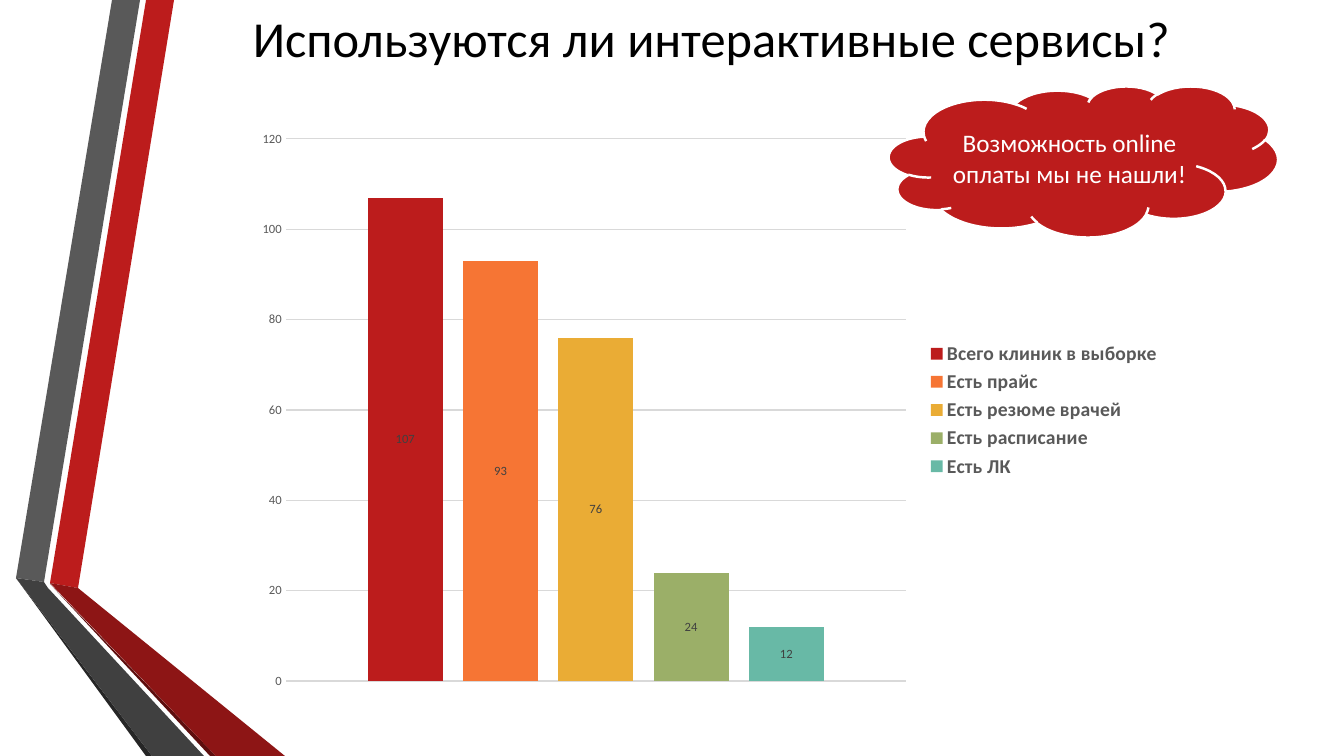
from lxml import etree
from pptx import Presentation
from pptx.chart.data import CategoryChartData
from pptx.dml.color import RGBColor
from pptx.enum.chart import XL_CHART_TYPE as ChartType
from pptx.enum.chart import XL_LABEL_POSITION as LabelPosition
from pptx.enum.chart import XL_LEGEND_POSITION as LegendPosition
from pptx.enum.chart import XL_TICK_MARK as TickMark
from pptx.enum.shapes import MSO_SHAPE as ShapeType
from pptx.enum.text import MSO_ANCHOR as Anchor
from pptx.enum.text import PP_ALIGN as Align
from pptx.util import Emu, Pt

SLIDE_WIDTH, SLIDE_HEIGHT = 1344, 756
EMU_PER_PX = 12192000 / SLIDE_WIDTH
FONT = "Calibri"

BLACK = RGBColor(0x00, 0x00, 0x00)
WHITE = RGBColor(0xFF, 0xFF, 0xFF)
RED = RGBColor(0xBC, 0x1C, 0x1C)
DEEP_RED = RGBColor(0x8D, 0x15, 0x15)
DARKEST_RED = RGBColor(0x5E, 0x0E, 0x0E)
ORANGE = RGBColor(0xF6, 0x75, 0x34)
YELLOW = RGBColor(0xEA, 0xAC, 0x35)
GREEN = RGBColor(0x9B, 0xAF, 0x68)
TEAL = RGBColor(0x68, 0xB9, 0xA6)
GRAY = RGBColor(0x59, 0x59, 0x59)
DARK_GRAY = RGBColor(0x40, 0x40, 0x40)
DARKEST_GRAY = RGBColor(0x26, 0x26, 0x26)
GRID_GRAY = RGBColor(0xD9, 0xD9, 0xD9)

TITLE = "Используются ли интерактивные сервисы?"
CLOUD_TEXT = "Возможность online оплаты мы не нашли!"
SERVICES = [
    ("Всего клиник в выборке", 107, RED),
    ("Есть прайс", 93, ORANGE),
    ("Есть резюме врачей", 76, YELLOW),
    ("Есть расписание", 24, GREEN),
    ("Есть ЛК", 12, TEAL),
]

TITLE_BOX = (159, 0, 1105, 75)
CHART_BOX = (244, 120, 928, 580)
CLOUD_BOX = (889, 86, 389, 151)
RIBBONS = [
    (RED, [(50, 583), (78, 588), (174, 0), (146, 0)]),
    (GRAY, [(140, 0), (112, 0), (16, 578), (44, 582)]),
    (DARKEST_GRAY, [(16, 578), (146, 756), (152, 756)]),
    (DARKEST_RED, [(50, 584), (210, 756), (216, 756)]),
    (DEEP_RED, [(50, 583), (216, 756), (285, 756), (78, 588)]),
    (DARK_GRAY, [(204, 756), (48, 588), (44, 582), (16, 578), (152, 756)]),
]


def to_emu(*lengths):
    return [Emu(round(length * EMU_PER_PX)) for length in lengths]


def set_font(font, size, color, bold=False):
    font.name, font.size, font.bold = FONT, Pt(size), bold
    font.color.rgb = color


def fill_text(shape, text, size, color):
    """Put one centred line of text in the middle of the shape."""
    frame = shape.text_frame
    frame.text = text
    frame.word_wrap = True
    frame.vertical_anchor = Anchor.MIDDLE
    paragraph = frame.paragraphs[0]
    paragraph.alignment = Align.CENTER
    set_font(paragraph.runs[0].font, size, color)


def add_ribbon(slide, color, points):
    builder = slide.shapes.build_freeform(*points[0], scale=EMU_PER_PX)
    builder.add_line_segments(points[1:], close=True)
    ribbon = builder.convert_to_shape()
    ribbon.fill.solid()
    ribbon.fill.fore_color.rgb = color
    ribbon.line.fill.background()
    ribbon.shadow.inherit = False


def add_title(slide):
    title = slide.shapes.title
    title.left, title.top, title.width, title.height = to_emu(*TITLE_BOX)
    fill_text(title, TITLE, 36, BLACK)


def add_services_chart(slide):
    data = CategoryChartData()
    data.categories = ["1"]
    for name, count, _ in SERVICES:
        data.add_series(name, [count])
    chart = slide.shapes.add_chart(
        ChartType.COLUMN_CLUSTERED, *to_emu(*CHART_BOX), data).chart
    set_font(chart.font, 10, BLACK)
    chart.has_title = False
    chart.has_legend = True
    chart.legend.position = LegendPosition.RIGHT
    chart.legend.include_in_layout = False
    set_font(chart.legend.font, 14, GRAY, bold=True)

    chart.category_axis.visible = False
    axis = chart.value_axis
    axis.major_tick_mark = axis.minor_tick_mark = TickMark.NONE
    axis.format.line.fill.background()
    set_font(axis.tick_labels.font, 9, GRAY)
    grid_line = axis.major_gridlines.format.line
    grid_line.color.rgb, grid_line.width = GRID_GRAY, Pt(0.75)

    plot = chart.plots[0]
    plot.gap_width, plot.overlap = 219, -27
    plot.vary_by_categories = False
    for series, (_, _, color) in zip(plot.series, SERVICES):
        series.format.fill.solid()
        series.format.fill.fore_color.rgb = color
        labels = series.data_labels
        labels.show_value = True
        labels.position = LabelPosition.CENTER
        set_font(labels.font, 9, DARK_GRAY)


def add_cloud(slide):
    cloud = slide.shapes.add_shape(ShapeType.CLOUD, *to_emu(*CLOUD_BOX))
    cloud.shadow.inherit = False
    cloud.fill.solid()
    cloud.fill.fore_color.rgb = RED
    cloud.line.color.rgb, cloud.line.width = WHITE, Pt(1.75)
    fill_text(cloud, CLOUD_TEXT, 18, WHITE)


def main():
    presentation = Presentation()
    presentation.slide_width, presentation.slide_height = to_emu(
        SLIDE_WIDTH, SLIDE_HEIGHT)
    title_only = presentation.slide_layouts[5]
    slide = presentation.slides.add_slide(title_only)
    for color, points in RIBBONS:
        add_ribbon(slide, color, points)
    add_title(slide)
    add_services_chart(slide)
    add_cloud(slide)
    presentation.save("out.pptx")


if __name__ == "__main__":
    main()
